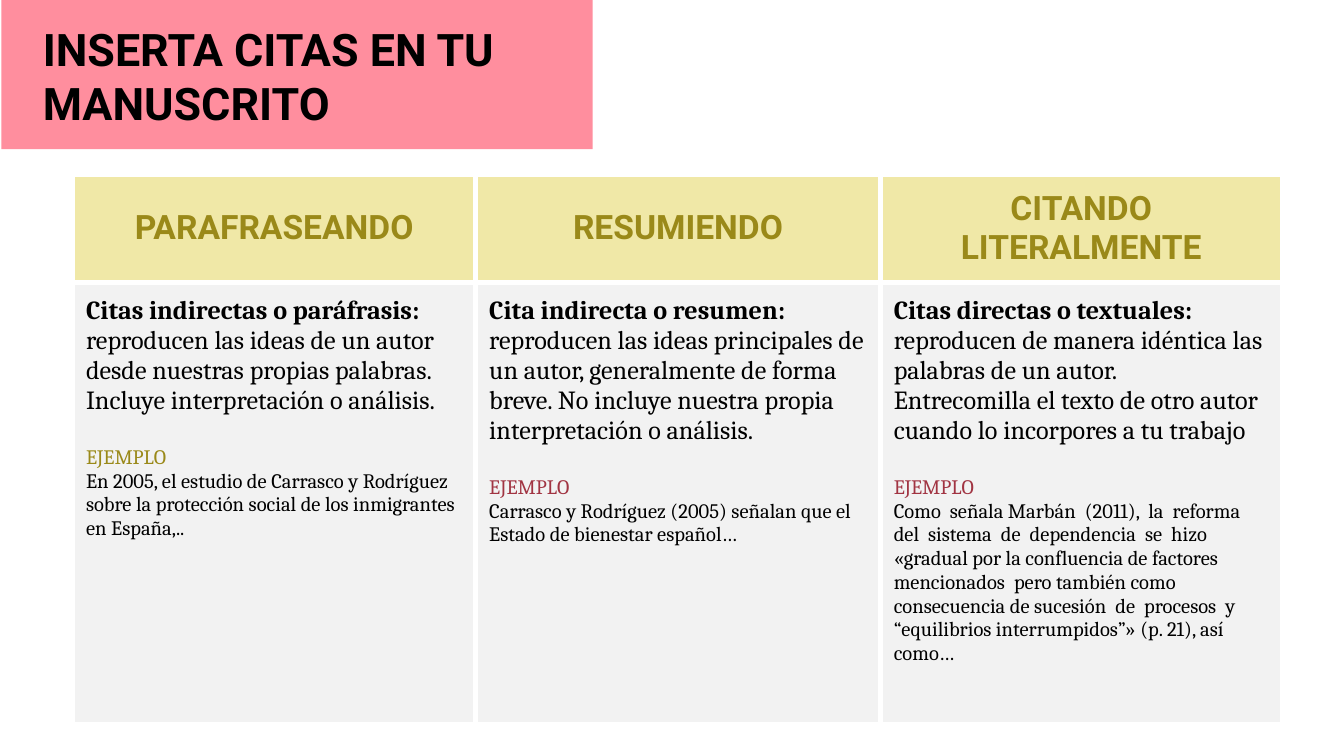
from dataclasses import dataclass

from lxml import etree
from pptx import Presentation, util as u
from pptx.dml.color import RGBColor
from pptx.enum import shapes, text
from pptx.oxml import ns


@dataclass(frozen=True)
class Theme:
    heading_font: str = "Roboto"
    body_font: str = "Cambria"
    ink: str = "000000"
    pink: str = "FF8E9E"
    cream: str = "F0E8A7"
    olive: str = "9A8919"
    wine: str = "A13442"
    gray: str = "F2F2F2"
    white: str = "FFFFFF"
    title_size: int = 24
    header_size: int = 18
    body_size: int = 14
    example_size: int = 11
    example_gap: int = 16
    border_width: int = 3


THEME = Theme()

# Content
TITLE = "INSERTA CITAS EN TU MANUSCRITO"
EXAMPLE_LABEL = "EJEMPLO"
COLUMNS = [
    {
        "header": "PARAFRASEANDO",
        "lead": "Citas indirectas o paráfrasis: ",
        "body": ["reproducen las ideas de un autor desde nuestras propias palabras. "
                 "Incluye interpretación o análisis."],
        "accent": THEME.olive,
        "example": ["En 2005, el estudio de Carrasco y Rodríguez sobre la protección "
                    "social de los inmigrantes en España,.."],
    },
    {
        "header": "RESUMIENDO",
        "lead": "Cita indirecta o resumen: ",
        "body": ["reproducen las ideas principales de un autor, generalmente de forma "
                 "breve. No incluye nuestra propia interpretación o análisis."],
        "accent": THEME.wine,
        "example": ["Carrasco y Rodríguez (2005) señalan que el Estado de bienestar español…"],
    },
    {
        "header": "CITANDO LITERALMENTE",
        "lead": "Citas directas o textuales: ",
        "body": ["reproducen de manera idéntica las palabras de un autor.",
                 "Entrecomilla el texto de otro autor cuando lo incorpores a tu trabajo"],
        "accent": THEME.wine,
        "example": ["Como  señala Marbán  (2011),  la  reforma  del  sistema  de  "
                    "dependencia  se  hizo",
                    "«gradual por la confluencia de factores mencionados  pero también como "
                    "consecuencia de sucesión  de  procesos  y “equilibrios "
                    "interrumpidos”» (p. 21), así como…"],
    },
]

# Layout in inches, on a 16:9 slide
SLIDE_WIDTH = 10
SLIDE_SIZE = (SLIDE_WIDTH, SLIDE_WIDTH * 9 / 16)
BANNER = (0.01, 0, 4.4, 1.11)
TITLE_BOX = (0.22, 0.06, 4.19, 1.31)
TABLE_BOX = (0.54, 1.3, 9.01, 3.83)
COLUMN_WIDTHS = (3, 3.01, 2.99)
ROW_HEIGHTS = (0.53, 3.29)
INSET = 0.1


def inches(values):
    return [u.Inches(value) for value in values]


def set_insets(target):
    target.margin_left = target.margin_right = u.Inches(INSET)
    target.margin_top = target.margin_bottom = u.Inches(INSET)


def paint(target, color):
    target.fill.solid()
    target.fill.fore_color.rgb = RGBColor.from_string(color)


def add_span(para, words, font, size, color=THEME.ink, bold=False):
    span = para.add_run()
    span.text = words
    span.font.name = font
    span.font.size = u.Pt(size)
    span.font.bold = bold
    span.font.color.rgb = RGBColor.from_string(color)


def set_borders(cell):
    properties = cell._tc.get_or_add_tcPr()
    for index, side in enumerate(("lnL", "lnR", "lnT", "lnB")):
        line = etree.Element(ns.qn(f"a:{side}"), w=str(u.Pt(THEME.border_width)))
        fill = etree.SubElement(line, ns.qn("a:solidFill"))
        etree.SubElement(fill, ns.qn("a:srgbClr"), val=THEME.white)
        properties.insert(index, line)


def add_title(page):
    banner = page.shapes.add_shape(shapes.MSO_SHAPE.RECTANGLE, *inches(BANNER))
    banner.shadow.inherit = False
    banner.line.fill.background()
    paint(banner, THEME.pink)

    frame = page.shapes.add_textbox(*inches(TITLE_BOX)).text_frame
    frame.word_wrap = True
    set_insets(frame)
    add_span(frame.paragraphs[0], TITLE, THEME.heading_font, THEME.title_size, bold=True)


def fill_header(cell, column):
    cell.vertical_anchor = text.MSO_ANCHOR.MIDDLE
    para = cell.text_frame.paragraphs[0]
    para.alignment = text.PP_ALIGN.CENTER
    add_span(para, column["header"], THEME.heading_font, THEME.header_size,
             THEME.olive, bold=True)


def fill_body(cell, column):
    frame, font = cell.text_frame, THEME.body_font
    add_span(frame.paragraphs[0], column["lead"], font, THEME.body_size, bold=True)
    for index, words in enumerate(column["body"]):
        para = frame.add_paragraph() if index else frame.paragraphs[0]
        add_span(para, words, font, THEME.body_size)

    label = frame.add_paragraph()
    label.space_before = u.Pt(THEME.example_gap)
    add_span(label, EXAMPLE_LABEL, font, THEME.example_size, column["accent"])
    for words in column["example"]:
        add_span(frame.add_paragraph(), words, font, THEME.example_size)


def add_citation_table(page):
    rows = ((fill_header, THEME.cream), (fill_body, THEME.gray))
    table = page.shapes.add_table(len(rows), len(COLUMNS), *inches(TABLE_BOX)).table
    for table_column, width in zip(table.columns, inches(COLUMN_WIDTHS)):
        table_column.width = width
    for table_row, height in zip(table.rows, inches(ROW_HEIGHTS)):
        table_row.height = height

    for row, (fill_cell, color) in enumerate(rows):
        for col, column in enumerate(COLUMNS):
            cell = table.cell(row, col)
            set_insets(cell)
            paint(cell, color)
            set_borders(cell)
            fill_cell(cell, column)


def main():
    deck = Presentation()
    deck.slide_width, deck.slide_height = inches(SLIDE_SIZE)
    page = deck.slides.add_slide(deck.slide_layouts[6])
    add_title(page)
    add_citation_table(page)
    deck.save("out.pptx")


if __name__ == "__main__":
    main()
